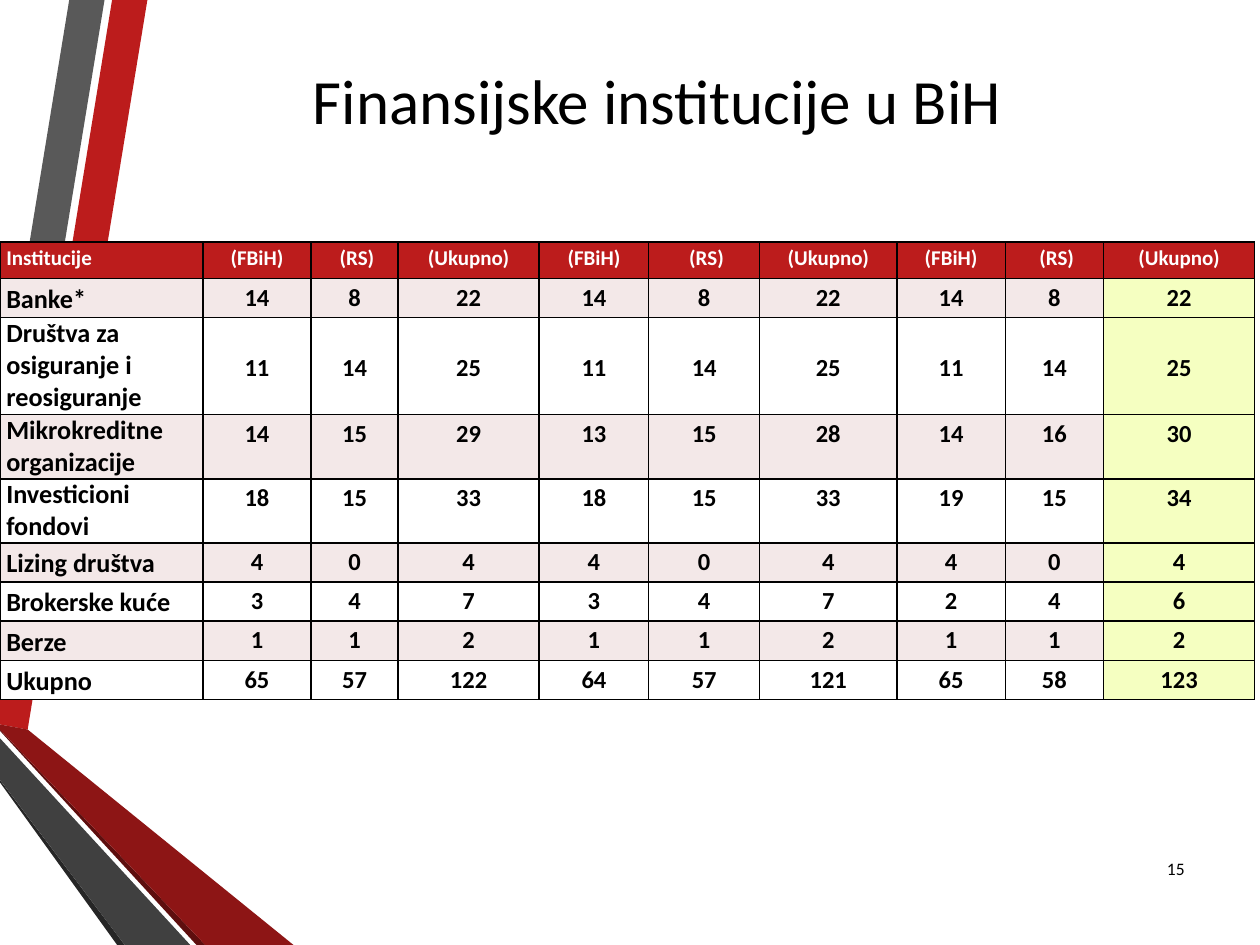
from dataclasses import dataclass

from lxml.etree import SubElement
from pptx import Presentation
from pptx.dml.color import RGBColor
from pptx.enum.text import MSO_ANCHOR, MSO_AUTO_SIZE, PP_ALIGN
from pptx.oxml.ns import qn
from pptx.util import Inches, Pt


@dataclass(frozen=True)
class Theme:
    font: str = "Calibri"
    black: str = "000000"
    white: str = "FFFFFF"
    red: str = "BC1C1C"
    band: str = "F3E8E8"
    highlight: str = "F5FFC1"
    title_size: int = 36
    header_size: int = 12
    label_size: int = 15
    number_size: int = 14
    page_size: int = 10


@dataclass(frozen=True)
class Ribbon:
    color: str
    points: tuple


@dataclass(frozen=True)
class Row:
    label: str
    values: tuple
    height: float = 0.31
    wrapped: bool = False
    anchor: MSO_ANCHOR = MSO_ANCHOR.TOP


THEME = Theme()

RIBBONS = [
    Ribbon(THEME.red, ((0, 5.44), (0, 5.75), (0.22, 5.79), (1.17, 0), (0.89, 0))),
    Ribbon("595959", ((0.83, 0), (0.55, 0), (0, 3.36), (0, 5.06))),
    Ribbon("262626", ((0, 6.19), (0, 6.21), (0.93, 7.5), (0.99, 7.5))),
    Ribbon("5E0E0E", ((0, 5.79), (0, 5.8), (1.56, 7.5), (1.63, 7.5))),
    Ribbon("8D1515", ((0, 5.79), (1.63, 7.5), (2.33, 7.5), (0.22, 5.79), (0, 5.75))),
    Ribbon("404040", ((0, 6.19), (0.99, 7.5), (1.51, 7.5), (0, 5.86))),
]

COL_WIDTHS = [1.61, 0.86, 0.69, 1.12, 0.87, 0.88, 1.09, 0.86, 0.78, 1.2]
HEADER = Row("Institucije", ("(FBiH)", " (RS)", "(Ukupno)") * 3, height=0.29)
ROWS = [
    Row("Banke*", (14, 8, 22, 14, 8, 22, 14, 8, 22)),
    Row("Društva za osiguranje i reosiguranje", (11, 14, 25, 11, 14, 25, 11, 14, 25),
        height=0.77, wrapped=True, anchor=MSO_ANCHOR.MIDDLE),
    Row("Mikrokreditne organizacije", (14, 15, 29, 13, 15, 28, 14, 16, 30),
        height=0.51, wrapped=True),
    Row("Investicioni fondovi", (18, 15, 33, 18, 15, 33, 19, 15, 34),
        height=0.51, wrapped=True),
    Row("Lizing društva", (4, 0, 4, 4, 0, 4, 4, 0, 4)),
    Row("Brokerske kuće", (3, 4, 7, 3, 4, 7, 2, 4, 6)),
    Row("Berze", (1, 1, 2, 1, 1, 2, 1, 1, 2)),
    Row("Ukupno", (65, 57, 122, 64, 57, 121, 65, 58, 123)),
]


def write(tf, text: str, size: int, color: str, align: PP_ALIGN, bold: bool = False):
    tf.text = text
    p = tf.paragraphs[0]
    p.alignment = align
    font = p.runs[0].font
    font.name, font.size, font.bold = THEME.font, Pt(size), bold
    font.color.rgb = RGBColor.from_string(color)
    return p


def draw_ribbon(slide, ribbon: Ribbon) -> None:
    start, *rest = [(Inches(x), Inches(y)) for x, y in ribbon.points]
    builder = slide.shapes.build_freeform(*start)
    builder.add_line_segments(rest, close=True)
    sp = builder.convert_to_shape()
    sp.shadow.inherit = False
    sp.fill.solid()
    sp.fill.fore_color.rgb = RGBColor.from_string(ribbon.color)
    sp.line.fill.background()


def add_borders(cell) -> None:
    """Outline the cell; call before filling, as borders precede the fill in the XML."""
    tc_pr = cell._tc.get_or_add_tcPr()
    for side in ("lnL", "lnR", "lnT", "lnB"):
        ln = SubElement(tc_pr, qn(f"a:{side}"), w=str(Pt(1)))
        fill = SubElement(ln, qn("a:solidFill"))
        SubElement(fill, qn("a:srgbClr"), val=THEME.black)


def fill_cell(cell, text: str, size: int, color: str, fill: str, align: PP_ALIGN,
              spacing: float = 1.15) -> None:
    cell.margin_left = cell.margin_right = Inches(0.05)
    cell.margin_top = cell.margin_bottom = 0
    p = write(cell.text_frame, text, size, color, align, bold=True)
    p.line_spacing = spacing
    add_borders(cell)
    cell.fill.solid()
    cell.fill.fore_color.rgb = RGBColor.from_string(fill)


def draw_table(slide) -> None:
    rows = [HEADER, *ROWS]
    table = slide.shapes.add_table(
        len(rows), len(COL_WIDTHS), 0, Inches(1.92),
        Inches(sum(COL_WIDTHS)), Inches(sum(row.height for row in rows))).table
    table.horz_banding = False
    for col, width in zip(table.columns, COL_WIDTHS):
        col.width = Inches(width)

    for i, row in enumerate(rows):
        table.rows[i].height = Inches(row.height)
        is_header = i == 0
        color = THEME.white if is_header else THEME.black
        row_fill = THEME.red if is_header else (THEME.band if i % 2 else THEME.white)
        fill_cell(table.cell(i, 0), row.label,
                  THEME.header_size if is_header else THEME.label_size,
                  color, row_fill, PP_ALIGN.LEFT, 1.0 if row.wrapped else 1.15)
        for j, value in enumerate(row.values, start=1):
            is_total = j == len(row.values) and not is_header
            cell = table.cell(i, j)
            fill_cell(cell, str(value),
                      THEME.header_size if is_header else THEME.number_size,
                      color, THEME.highlight if is_total else row_fill, PP_ALIGN.CENTER)
            cell.vertical_anchor = row.anchor


def draw_title(slide) -> None:
    title = slide.shapes.title
    title.left, title.top = Inches(1), Inches(0.81)
    title.width, title.height = Inches(8.43), Inches(0.5)
    tf = title.text_frame
    tf.auto_size = MSO_AUTO_SIZE.NONE
    tf.vertical_anchor = MSO_ANCHOR.BOTTOM
    tf.margin_top, tf.margin_bottom = 0, Inches(0.22)
    write(tf, "Finansijske institucije u BiH", THEME.title_size, THEME.black,
          PP_ALIGN.CENTER)


def draw_page_number(slide) -> None:
    box = slide.shapes.add_textbox(Inches(9.05), Inches(6.69), Inches(0.45), Inches(0.4))
    tf = box.text_frame
    tf.word_wrap = True
    tf.vertical_anchor = MSO_ANCHOR.MIDDLE
    write(tf, "15", THEME.page_size, THEME.black, PP_ALIGN.RIGHT)


def main() -> None:
    prs = Presentation()
    prs.slide_width, prs.slide_height = Inches(10), Inches(7.5)
    slide = prs.slides.add_slide(prs.slide_layouts[5])
    for ribbon in RIBBONS:
        draw_ribbon(slide, ribbon)
    draw_title(slide)
    draw_table(slide)
    draw_page_number(slide)
    prs.save("out.pptx")


if __name__ == "__main__":
    main()
